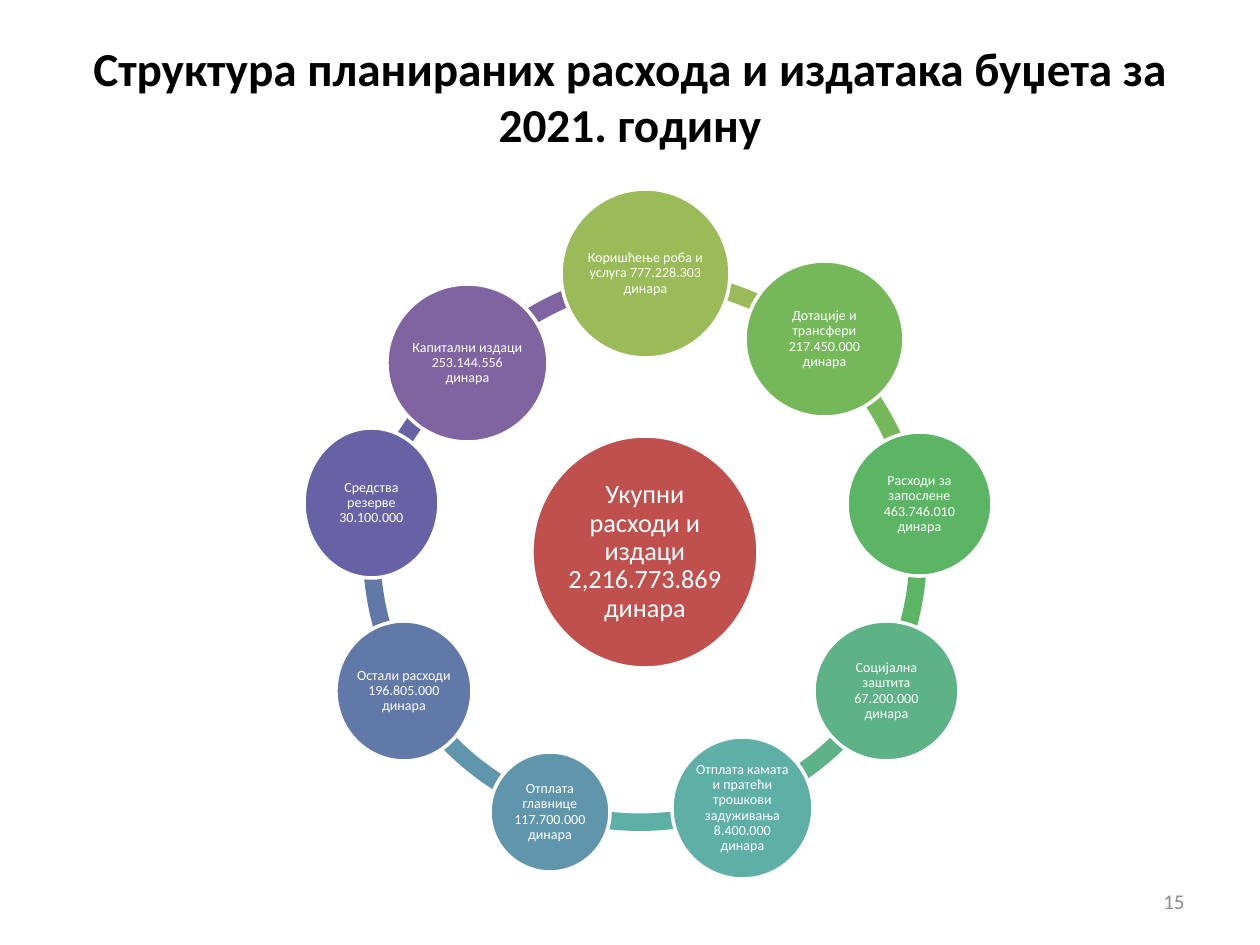
from pptx import Presentation
from pptx.dml.color import RGBColor
from pptx.enum.shapes import MSO_SHAPE as Shape
from pptx.enum.text import MSO_ANCHOR as Anchor, MSO_AUTO_SIZE as Fit, PP_ALIGN as Align
from pptx.util import Pt

PX = 914400 / 126
RING = 564
BAND = 0.031
WHITE = "FFFFFF"

# text, colour, circle box, corner of the arc, arc start and end
PARTS = [
    ("Коришћење роба и услуга 777.228.303 динара", "9BBB59",
     (561, 189, 169, 169), (363, 270), (162, 186)),
    ("Дотације и трансфери 217.450.000 динара", "75B85A",
     (745, 261, 159, 156), (363, 270), (186, 210)),
    ("Расходи за запослене 463.746.010 динара", "5CB565",
     (847, 432, 145, 144), (363, 270), (210, 18)),
    ("Социјална заштита 67.200.000 динара", "5DB287",
     (814, 621, 145, 140), (365, 265), (18.61, 42.01)),
    ("Отплата камата и пратећи трошкови задуживања 8.400.000 динара", "5EAFA6",
     (672, 737, 141, 142), (358, 267), (41.08, 65.41)),
    ("Отплата главнице 117.700.000 динара", "6096AC",
     (490, 752, 120, 120), (363, 270), (66, 90)),
    ("Остали расходи 196.805.000 динара", "6179A8",
     (336, 621, 136, 140), (363, 270), (90, 114)),
    ("Средства резерве 30.100.000", "6762A5",
     (304, 428, 135, 150), (355, 300), (117.85, 139.28)),
    ("Капитални издаци 253.144.556 динара", "8064A2",
     (387, 284, 161, 158), (391, 268), (133.51, 158.63)),
]


def px(*nums):
    return [round(n * PX) for n in nums]


def rgb(code):
    return RGBColor.from_string(code)


def write(shape, text, size, color, bold=False, align=Align.CENTER, gap=1.0, inset=None):
    frame = shape.text_frame
    frame.word_wrap = True
    frame.auto_size = Fit.NONE
    frame.vertical_anchor = Anchor.MIDDLE
    if inset is not None:
        frame.margin_left, frame.margin_top, frame.margin_right, frame.margin_bottom = px(*[inset] * 4)
    para = frame.paragraphs[0]
    para.alignment = align
    para.line_spacing = gap
    run = para.add_run()
    run.text = text
    font = run.font
    font.name, font.size, font.bold = "Calibri", Pt(size), bold
    font.color.rgb = rgb(color)


def add_form(slide, kind, box, color):
    form = slide.shapes.add_shape(kind, *px(*box))
    form.shadow.inherit = False
    form.fill.solid()
    form.fill.fore_color.rgb = rgb(color)
    return form


def add_arc(slide, corner, angles, color):
    """Angles are in units of 100000/60000 of a degree, clockwise from the right."""
    arc = add_form(slide, Shape.BLOCK_ARC, (*corner, RING, RING), color)
    arc.line.fill.background()
    for i, value in enumerate((*angles, BAND)):
        arc.adjustments[i] = value


def add_disc(slide, box, color, text, size, inset):
    disc = add_form(slide, Shape.OVAL, box, color)
    disc.line.color.rgb = rgb(WHITE)
    disc.line.width = Pt(2)
    write(disc, text, size, WHITE, gap=0.9, inset=inset)


def add_title(slide, text):
    title = slide.shapes.title
    title.left, title.top, title.width, title.height = px(63, 37, 1134, 117)
    write(title, text, 27, "000000", bold=True)


def main():
    deck = Presentation()
    deck.slide_width, deck.slide_height = px(1260, 945)
    slide = deck.slides.add_slide(deck.slide_layouts[5])
    add_title(slide, "Структура планираних расхода и издатака буџета за 2021. годину")
    for _, color, _, corner, angles in reversed(PARTS):
        add_arc(slide, corner, angles, color)
    add_disc(slide, (532, 436, 226, 232), "C0504D",
             "Укупни расходи и издаци 2,216.773.869 динара", 15, 2)
    for text, color, box, _, _ in PARTS:
        add_disc(slide, box, color, text, 8, 1)
    page = slide.shapes.add_textbox(*px(903, 876, 294, 50))
    write(page, "15", 12, "8C8C8C", align=Align.RIGHT)
    deck.save("out.pptx")


if __name__ == "__main__":
    main()
